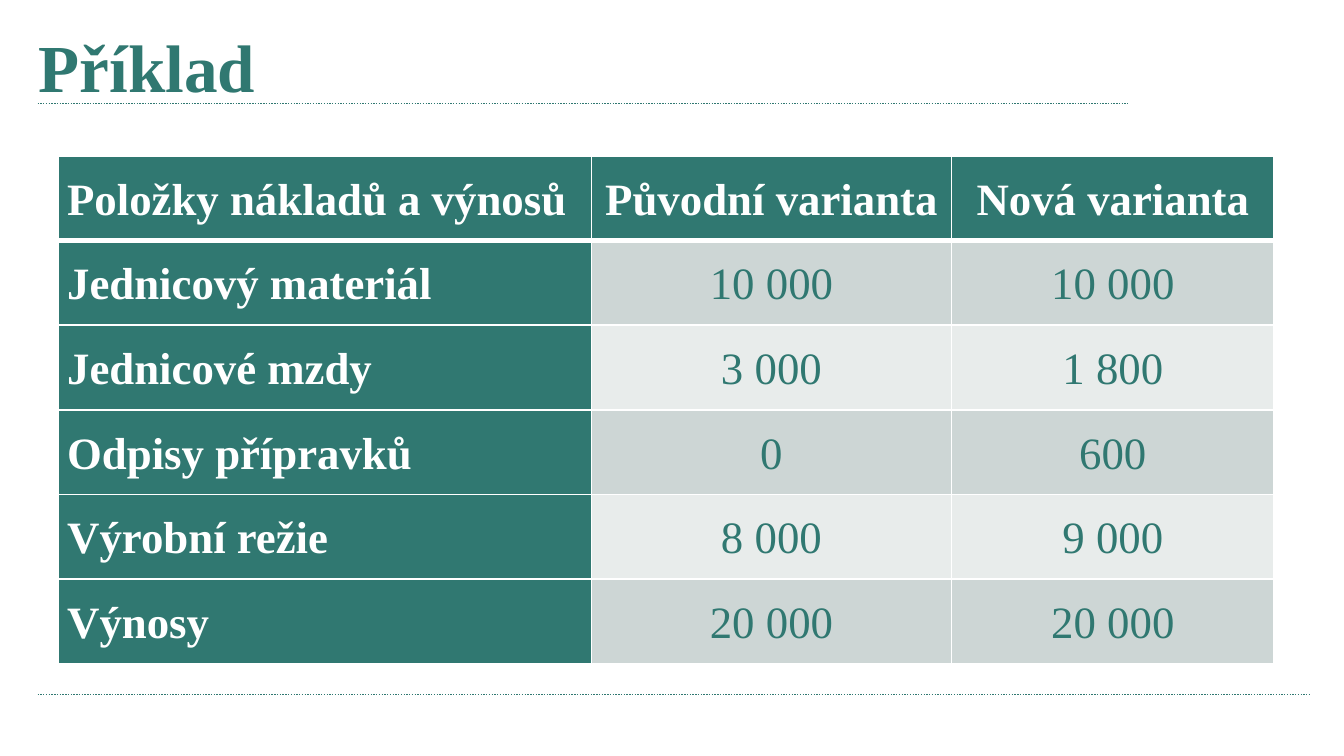
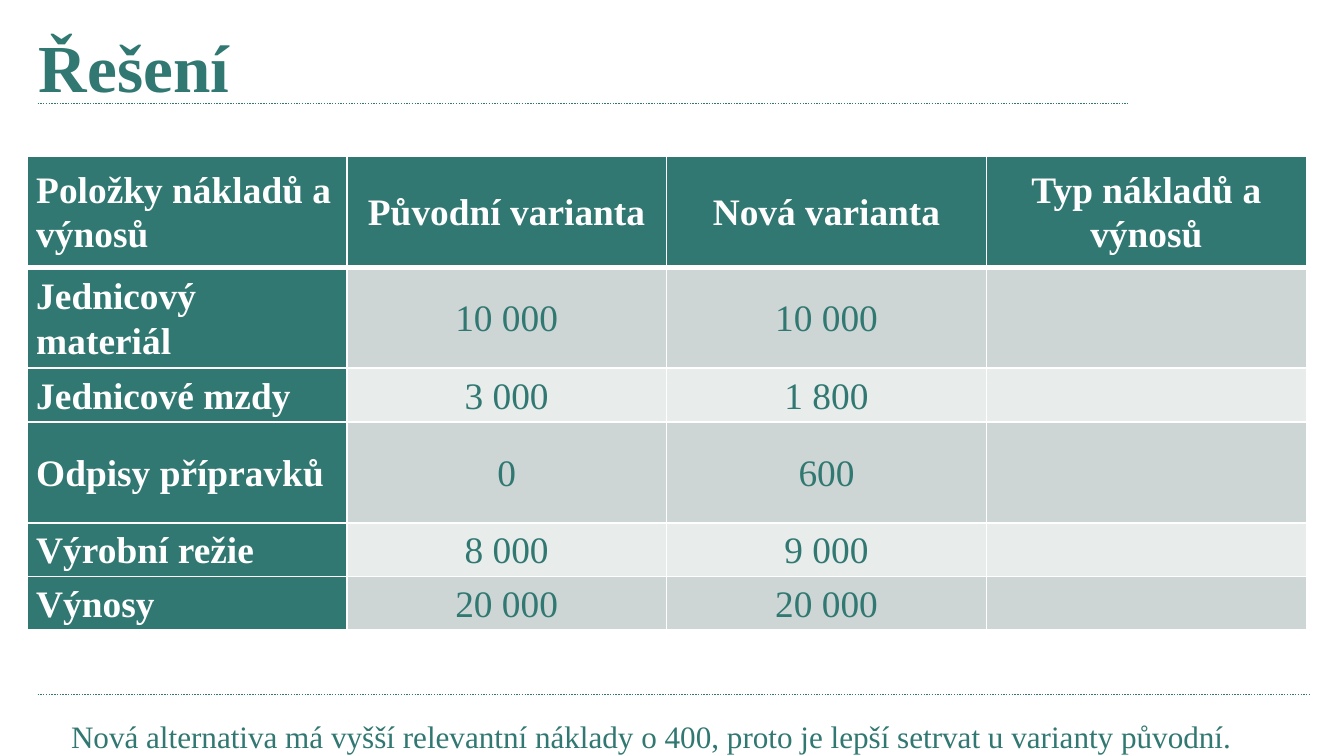
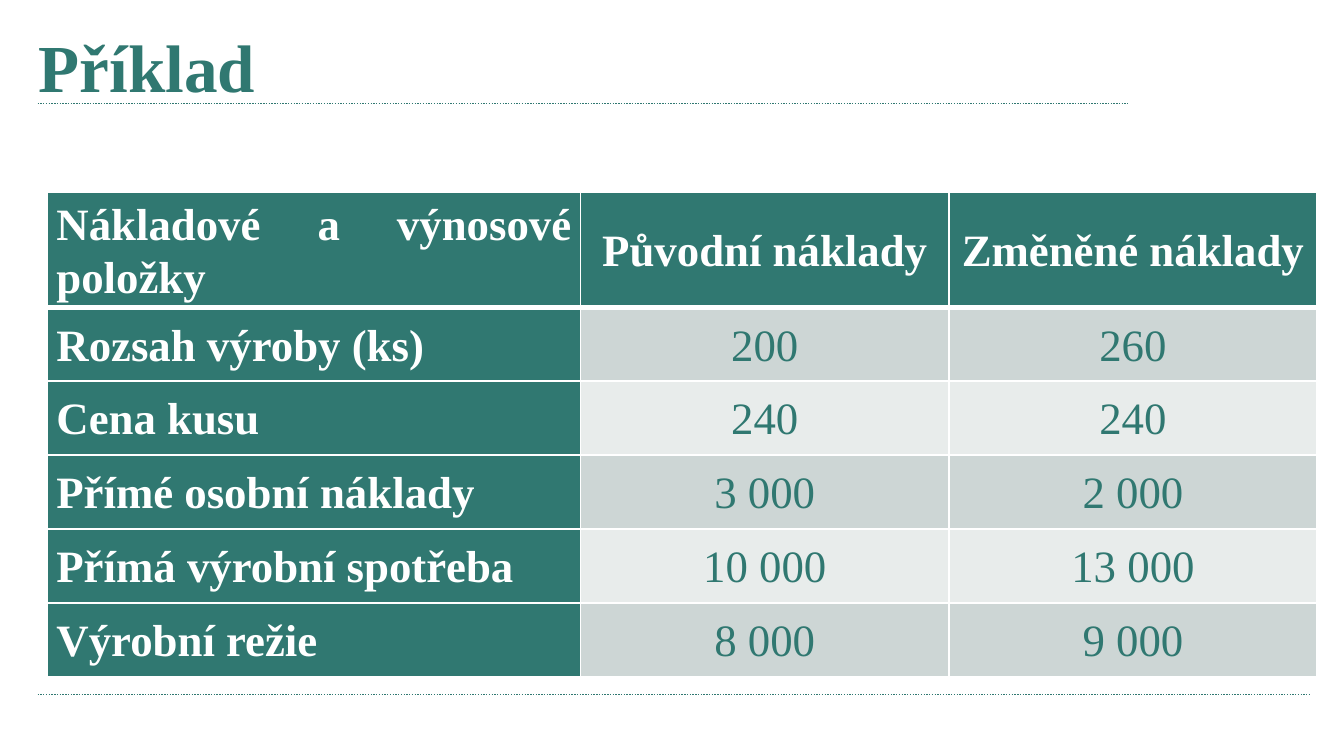
from lxml.etree import SubElement
from pptx import Presentation
from pptx.dml.color import RGBColor
from pptx.enum.dml import MSO_LINE
from pptx.enum.shapes import MSO_CONNECTOR
from pptx.enum.text import MSO_ANCHOR, PP_ALIGN
from pptx.oxml.ns import qn
from pptx.util import Inches, Pt

COLORS = {
    "green": "307871",
    "white": "FFFFFF",
    "dark_band": "CDD6D5",
    "light_band": "E8ECEB",
}
FONT = "Times New Roman"
RULES = [(0.28, 8.39, 0.77), (0.28, 9.75, 5.17)]

VARIANT_HEADER = ["Položky nákladů a výnosů", "Původní varianta", "Nová varianta"]
VARIANT_ROWS = [
    ["Jednicový materiál", "10 000", "10 000"],
    ["Jednicové mzdy", "3 000", "1 800"],
    ["Odpisy přípravků", "0", "600"],
    ["Výrobní režie", "8 000", "9 000"],
    ["Výnosy", "20 000", "20 000"],
]
COST_ROWS = [
    ["Nákladové a výnosové položky", "Původní náklady", "Změněné náklady"],
    ["Rozsah výroby (ks)", "200", "260"],
    ["Cena kusu", "240", "240"],
    ["Přímé osobní náklady", "3 000", "2 000"],
    ["Přímá výrobní spotřeba", "10 000", "13 000"],
    ["Výrobní režie", "8 000", "9 000"],
]


def color(name):
    return RGBColor.from_string(COLORS[name])


def add_run(paragraph, text, size, color_name, bold=False):
    run = paragraph.add_run()
    run.text = text
    run.font.name = FONT
    run.font.size = Pt(size)
    run.font.bold = bold
    run.font.color.rgb = color(color_name)


def add_text(slide, text, left, top, width, height, size, bold=False):
    shape = slide.shapes.add_textbox(
        Inches(left), Inches(top), Inches(width), Inches(height)
    )
    frame = shape.text_frame
    frame.word_wrap = True
    frame.vertical_anchor = MSO_ANCHOR.MIDDLE
    add_run(frame.paragraphs[0], text, size, "green", bold)
    return frame


def add_rule(slide, start, end, top):
    rule = slide.shapes.add_connector(
        MSO_CONNECTOR.STRAIGHT, Inches(start), Inches(top), Inches(end), Inches(top)
    )
    rule.line.color.rgb = color("green")
    rule.line.width = Pt(0.75)
    rule.line.dash_style = MSO_LINE.ROUND_DOT
    SubElement(rule.element.spPr, qn("a:effectLst"))


def add_titled_slide(presentation, title):
    slide = presentation.slides.add_slide(presentation.slide_layouts[6])
    for start, end, top in RULES:
        add_rule(slide, start, end, top)
    frame = add_text(slide, title, 0.2, 0.14, 8.82, 0.79, 36, bold=True)
    frame.margin_left = Inches(0.09)
    frame.margin_bottom = Inches(0.15)
    return slide


def set_borders(cell, top_width, bottom_width):
    properties = cell._tc.get_or_add_tcPr()
    widths = {"lnL": 1, "lnR": 1, "lnT": top_width, "lnB": bottom_width}
    for side, width in widths.items():
        border = SubElement(properties, qn(f"a:{side}"), w=str(Pt(width)))
        fill = SubElement(border, qn("a:solidFill"))
        SubElement(fill, qn("a:srgbClr"), val=COLORS["white"])


def fill_cell(cell, text, row, column, size, label_alignment):
    is_heading = row == 0 or column == 0
    band = "dark_band" if row % 2 else "light_band"
    set_borders(cell, 3 if row == 1 else 1, 3 if row == 0 else 1)
    cell.fill.solid()
    cell.fill.fore_color.rgb = color("green" if is_heading else band)
    cell.vertical_anchor = MSO_ANCHOR.MIDDLE
    cell.margin_left = cell.margin_right = Inches(0.07)
    cell.margin_top = cell.margin_bottom = 0
    paragraph = cell.text_frame.paragraphs[0]
    paragraph.alignment = PP_ALIGN.CENTER if column else label_alignment
    paragraph.line_spacing = 1.07
    if text:
        add_run(paragraph, text, size, "white" if is_heading else "green", is_heading)


def add_cost_table(slide, rows, left, top, widths, heights, total_height, size,
                   label_alignment=PP_ALIGN.LEFT):
    table_shape = slide.shapes.add_table(
        len(rows), len(widths), Inches(left), Inches(top),
        Inches(sum(widths)), Inches(total_height),
    )
    table = table_shape.table
    table.first_col = True
    for column, width in zip(table.columns, widths):
        column.width = Inches(width)
    for table_row, height in zip(table.rows, heights):
        table_row.height = Inches(height)
    table_shape.height = Inches(total_height)
    for row, texts in enumerate(rows):
        for column, text in enumerate(texts):
            fill_cell(table.cell(row, column), text, row, column, size, label_alignment)


def main():
    presentation = Presentation()
    presentation.slide_width = Inches(10)
    presentation.slide_height = Inches(10 * 9 / 16)

    slide = add_titled_slide(presentation, "Příklad")
    add_cost_table(slide, [VARIANT_HEADER] + VARIANT_ROWS, 0.43, 1.16,
                   [3.97, 2.68, 2.4], [0.63] * 6, 3.78, 24)

    slide = add_titled_slide(presentation, "Řešení")
    add_text(
        slide,
        "Nová alternativa má vyšší relevantní náklady o 400, "
        "proto je lepší setrvat u varianty původní.",
        0.43, 5.3, 9.29, 0.36, 16.7,
    )
    typed_rows = [VARIANT_HEADER + ["Typ nákladů a výnosů"]]
    typed_rows += [row + [""] for row in VARIANT_ROWS]
    add_cost_table(slide, typed_rows, 0.2, 1.16, [2.38] * 4,
                   [0.83, 0.75, 0.4, 0.75, 0.4, 0.4], 3.54, 20)

    slide = add_titled_slide(presentation, "Příklad")
    add_cost_table(slide, COST_ROWS, 0.35, 1.43, [3.97, 2.74, 2.74],
                   [0.55] * 6, 3.61, 24, PP_ALIGN.JUSTIFY)

    presentation.save("out.pptx")


if __name__ == "__main__":
    main()
